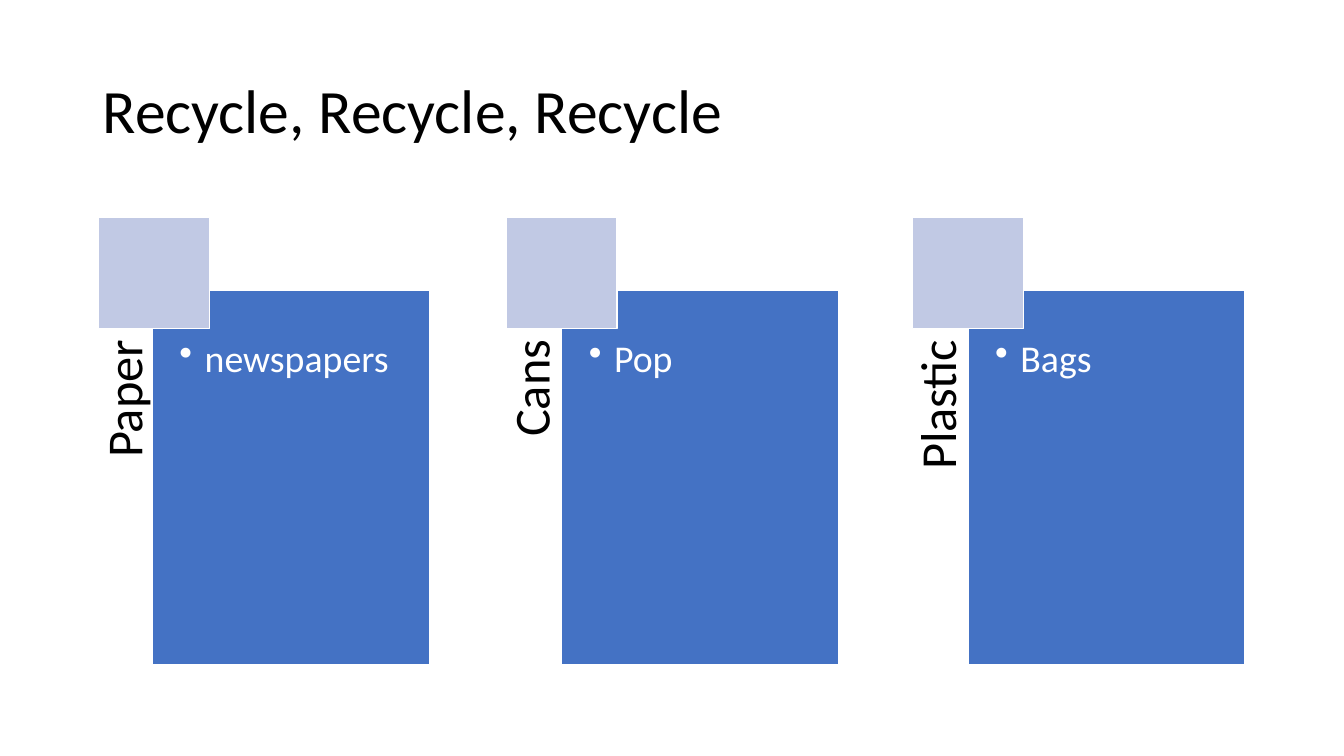
from dataclasses import dataclass

from lxml import etree
from pptx import Presentation
from pptx import util as u
from pptx.dml.color import RGBColor
from pptx.enum import shapes, text
from pptx.oxml.ns import qn

PX = 9144  # EMU per px, 100 px to the inch
FONT = "Calibri"
COLORS = {"black": "000000", "white": "FFFFFF", "panel": "4472C4", "tile": "C1C9E4"}

TILE_TOP, TILE_SIDE = 216, 110
PANEL_TOP, PANEL_WIDTH, PANEL_HEIGHT = 288, 275, 371
LABEL_THICKNESS = 55
LABEL_SHIFT = -158  # from the tile's left edge to the unrotated label box
BULLET_INDENT = 25


@dataclass(frozen=True)
class Box:
    left: int
    top: int
    width: int
    height: int

    def emu(self) -> tuple[int, ...]:
        return tuple(side * PX for side in (self.left, self.top, self.width, self.height))


@dataclass(frozen=True)
class Category:
    label: str
    item: str
    tile_left: int
    panel_left: int


CATEGORIES = [
    Category("Paper", "newspapers", 98, 151),
    Category("Cans", "Pop", 502, 557),
    Category("Plastic", "Bags", 905, 960),
]


def color(name: str) -> RGBColor:
    return RGBColor.from_string(COLORS[name])


def add_rectangle(slide, box: Box, fill: str):
    shape = slide.shapes.add_shape(shapes.MSO_SHAPE.RECTANGLE, *box.emu())
    shape.shadow.inherit = False
    shape.fill.solid()
    shape.fill.fore_color.rgb = color(fill)
    shape.line.color.rgb = color("white")
    shape.line.width = u.Pt(1)
    return shape


def write(shape, content: str, size: int, ink: str, align, anchor,
          insets: tuple[int, int, int, int]):
    """Fill the shape with one paragraph; insets are left, top, right, bottom."""
    frame = shape.text_frame
    frame.word_wrap = True
    frame.vertical_anchor = anchor
    (frame.margin_left, frame.margin_top,
     frame.margin_right, frame.margin_bottom) = (inset * PX for inset in insets)
    paragraph = frame.paragraphs[0]
    paragraph.alignment = align
    paragraph.line_spacing = 0.9
    run = paragraph.add_run()
    run.text = content
    run.font.name = FONT
    run.font.size = u.Pt(size)
    run.font.color.rgb = color(ink)
    return paragraph


def add_bullet(paragraph) -> None:
    properties = paragraph._p.get_or_add_pPr()
    properties.set("marL", str(BULLET_INDENT * PX))
    properties.set("indent", str(-BULLET_INDENT * PX))
    etree.SubElement(properties, qn("a:buChar")).set("char", "•")


def add_category(slide, category: Category) -> None:
    # Label reading upwards beside the panel
    label_top = PANEL_TOP + (PANEL_HEIGHT - LABEL_THICKNESS) // 2
    label_box = Box(category.tile_left + LABEL_SHIFT, label_top,
                    PANEL_HEIGHT, LABEL_THICKNESS)
    label = slide.shapes.add_textbox(*label_box.emu())
    label.rotation = 270
    write(label, category.label, 36, "black", text.PP_ALIGN.RIGHT,
          text.MSO_ANCHOR.TOP, (0, 0, 49, 0))

    # Panel with its bulleted item
    panel_box = Box(category.panel_left, PANEL_TOP, PANEL_WIDTH, PANEL_HEIGHT)
    panel = add_rectangle(slide, panel_box, "panel")
    item = write(panel, category.item, 27, "white", text.PP_ALIGN.LEFT,
                 text.MSO_ANCHOR.TOP, (27, 49, 27, 27))
    add_bullet(item)

    # Tile over the panel's corner
    add_rectangle(slide, Box(category.tile_left, TILE_TOP, TILE_SIDE, TILE_SIDE), "tile")


def main() -> None:
    presentation = Presentation()
    presentation.slide_width = 1333 * PX
    presentation.slide_height = 750 * PX
    slide = presentation.slides.add_slide(presentation.slide_layouts[6])

    # Title
    title = slide.shapes.add_textbox(*Box(92, 40, 1150, 145).emu())
    write(title, "Recycle, Recycle, Recycle", 44, "black", text.PP_ALIGN.LEFT,
          text.MSO_ANCHOR.MIDDLE, (10, 5, 10, 5))

    # Columns
    for category in CATEGORIES:
        add_category(slide, category)

    presentation.save("out.pptx")


if __name__ == "__main__":
    main()
